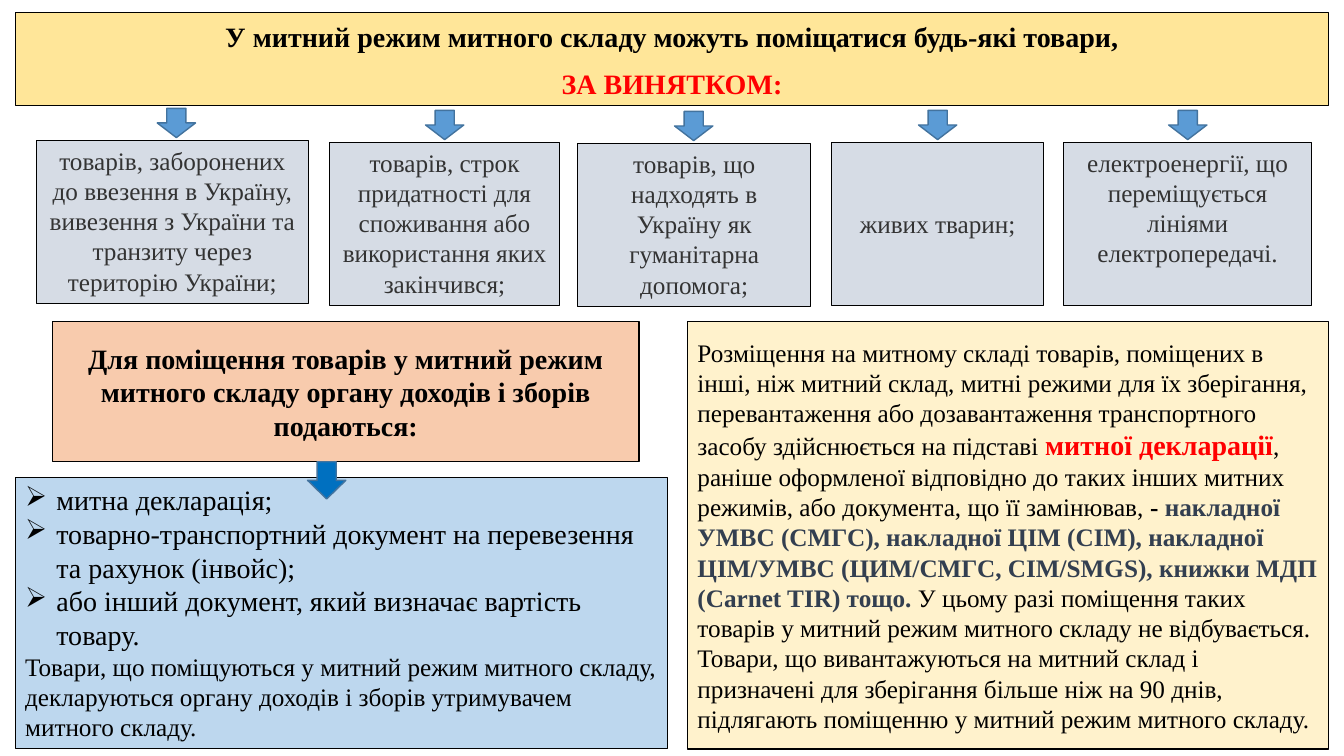
from lxml.etree import SubElement as Sub
from pptx import Presentation
from pptx.dml.color import RGBColor as RGB
from pptx.enum.shapes import MSO_SHAPE as Kind
from pptx.enum.text import MSO_ANCHOR as Anchor, MSO_AUTO_SIZE as Auto, PP_ALIGN as Align
from pptx.oxml.ns import qn
from pptx.util import Inches, Pt

BLACK = RGB(0, 0, 0)
RED = RGB(255, 0, 0)
GRAY = RGB(0x33, 0x33, 0x33)
SLATE = RGB(0x33, 0x3F, 0x50)
GOLD = RGB(0xFF, 0xE6, 0x99)
MIST = RGB(0xD6, 0xDC, 0xE5)
PEACH = RGB(0xF8, 0xCB, 0xAD)
CREAM = RGB(0xFF, 0xF2, 0xCC)
SKY = RGB(0xBD, 0xD7, 0xEE)
BLUE = RGB(0x5B, 0x9B, 0xD5)
DEEP = RGB(0, 0x70, 0xC0)
EDGE = RGB(0x43, 0x73, 0x9E)


def look(size, color=BLACK, bold=False):
    return {"name": "Times New Roman", "size": Pt(size), "bold": bold, "color": color}


BODY, LARGE, CARD = look(18), look(20), look(18, GRAY)
HEAD, ALERT = look(20, BLACK, True), look(20, RED, True)
DASH, NOTE = look(18, BLACK, True), look(18, SLATE, True)

TITLE = [
    [("У митний режим митного складу можуть поміщатися будь-які товари,", HEAD)],
    [("ЗА ВИНЯТКОМ:", ALERT)],
]
# columns: left, top, width, arrow left, anchor, text
CARDS = [
    (2.7, 18.53, 20.26, 11.7, Anchor.TOP,
     "товарів, заборонених до ввезення в Україну, вивезення з України та транзиту через територію України;"),
    (24.53, 18.8, 17.1, 31.66, Anchor.TOP,
     "товарів, строк придатності для споживання або використання яких закінчився;"),
    (42.99, 18.93, 17.33, 50.19, Anchor.TOP,
     "товарів, що надходять в Україну як гуманітарна допомога;"),
    (61.89, 18.8, 15.75, 68.34, Anchor.MIDDLE, "живих тварин;"),
    (79.14, 18.8, 18.45, 86.95, Anchor.TOP,
     "електроенергії, що переміщується лініями електропередачі."),
]
NEED = [[("Для поміщення товарів у митний режим митного складу "
          "органу доходів і зборів подаються:", HEAD)]]
RULE = [[
    ("Розміщення на митному складі товарів, поміщених в інші, ніж митний склад, митні режими "
     "для їх зберігання, перевантаження або дозавантаження транспортного засобу "
     "здійснюється на підставі ", BODY),
    ("митної декларації", ALERT),
    (", раніше оформленої відповідно до таких інших митних режимів, або документа, "
     "що її замінював, ", BODY),
    ("- ", DASH),
    ("накладної УМВС (СМГС), накладної ЦІМ (СIМ), накладної ЦІМ/УМВС (ЦИМ/СМГС, CIM/SMGS), "
     "книжки МДП (Carnet TIR) тощо. ", NOTE),
    ("У цьому разі поміщення таких товарів у митний режим митного складу не відбувається. "
     "Товари, що вивантажуються на митний склад і призначені для зберігання більше ніж "
     "на 90 днів, підлягають поміщенню у митний режим митного складу.", BODY),
]]
PAPERS = [
    "митна декларація;",
    "товарно-транспортний документ на перевезення та рахунок (інвойс);",
    "або інший документ, який визначає вартість товару.",
]
CLOSE = ("Товари, що поміщуються у митний режим митного складу, декларуються органу "
         "доходів і зборів утримувачем митного складу.")

deck = Presentation()
deck.slide_width, deck.slide_height = Inches(13.33), Inches(7.5)
slide = deck.slides.add_slide(deck.slide_layouts[5])


def place(left, top, width, height):
    across, down = deck.slide_width / 100, deck.slide_height / 100
    return [round(n) for n in (left * across, top * down, width * across, height * down)]


def paint(shape, fill, line, weight):
    shape.fill.solid()
    shape.fill.fore_color.rgb = fill
    shape.line.color.rgb = line
    shape.line.width = Pt(weight)


def draw(kind, area, fill, line=BLACK, weight=0.75):
    shape = slide.shapes.add_shape(kind, *place(*area))
    shape.shadow.inherit = False
    paint(shape, fill, line, weight)
    return shape


def write(shape, paras, anchor=Anchor.TOP, align=Align.CENTER, **form):
    frame = shape.text_frame
    frame.word_wrap, frame.auto_size = True, Auto.NONE
    frame.vertical_anchor = anchor
    for i, runs in enumerate(paras):
        para = frame.add_paragraph() if i else frame.paragraphs[0]
        para.alignment = align
        for key, value in form.items():
            setattr(para, key, value)
        for text, style in runs:
            run = para.add_run()
            run.text = text
            for key, value in style.items():
                if key == "color":
                    run.font.color.rgb = value
                else:
                    setattr(run.font, key, value)


def mark(para):
    props = para._p.get_or_add_pPr()
    props.set("marL", str(Inches(0.31)))
    props.set("indent", str(-Inches(0.31)))
    Sub(props, qn("a:buChar")).set("char", "➢")


head = slide.shapes.title
head.left, head.top, head.width, head.height = place(1.13, 1.6, 97.75, 12.4)
paint(head, GOLD, BLACK, 0.75)
write(head, TITLE, line_spacing=1.07, space_after=Pt(8))

for left, top, width, tip, anchor, text in CARDS:
    card = draw(Kind.RECTANGLE, (left, top, width, 21.6), MIST)
    write(card, [[(text, CARD)]], anchor)
    draw(Kind.DOWN_ARROW, (tip, top - 4.2, 2.85, 3.87), BLUE, EDGE, 1)

need = draw(Kind.FLOWCHART_PROCESS, (3.9, 42.53, 43.66, 18.53), PEACH, weight=1)
write(need, NEED, Anchor.MIDDLE)
rule = draw(Kind.FLOWCHART_PROCESS, (51.16, 42.53, 47.71, 56.53), CREAM, weight=1)
write(rule, RULE, Anchor.MIDDLE, Align.LEFT)

papers = draw(Kind.RECTANGLE, (1.13, 63.2, 48.54, 35.87), SKY)
write(papers, [[(text, LARGE)] for text in PAPERS] + [[(CLOSE, BODY)]], align=Align.LEFT)
for para in papers.text_frame.paragraphs[:len(PAPERS)]:
    mark(para)
draw(Kind.DOWN_ARROW, (22.88, 61.07, 2.85, 4.93), DEEP, EDGE, 1)

deck.save("out.pptx")
